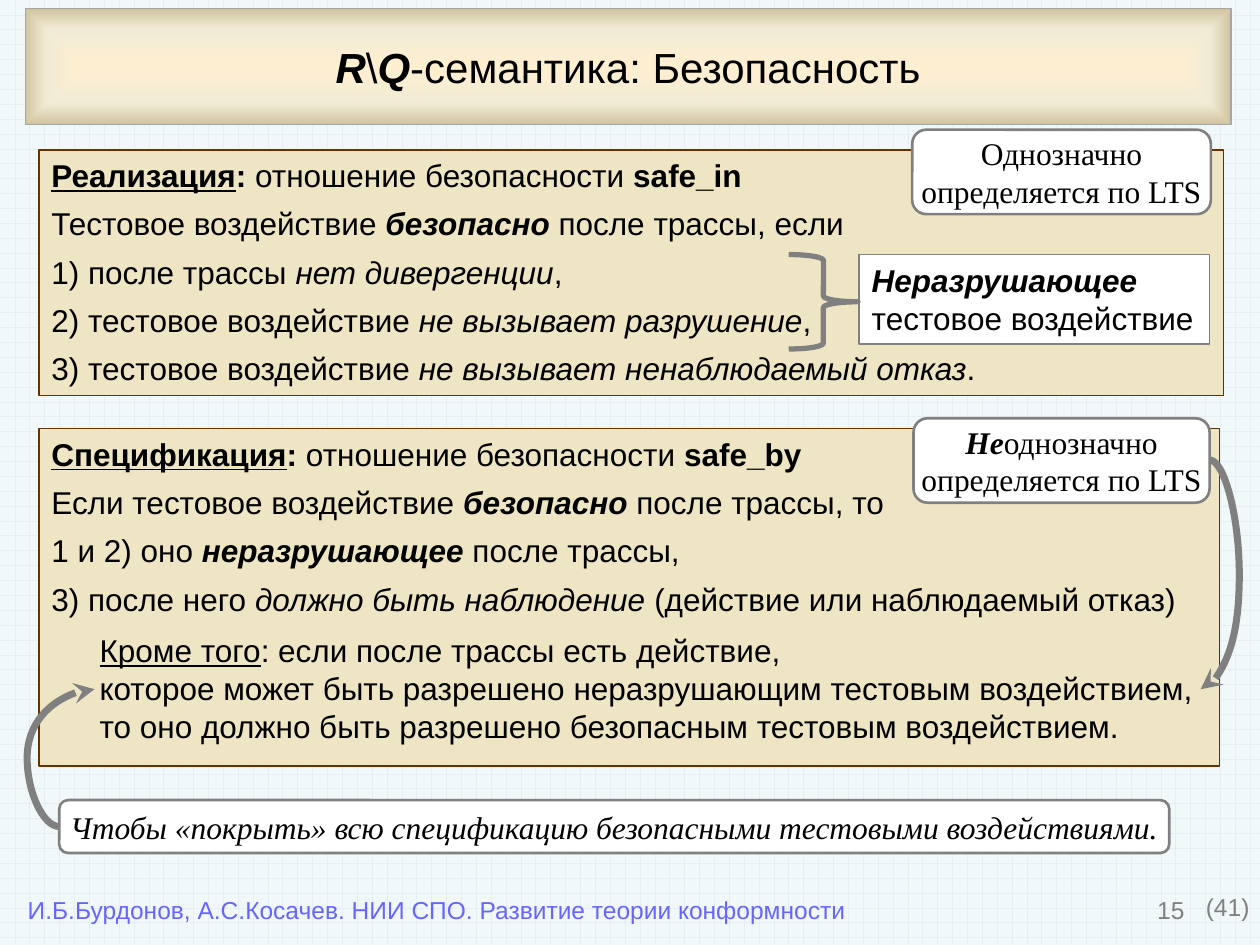
from lxml import etree
from pptx import Presentation
from pptx.dml.color import RGBColor
from pptx.enum.dml import MSO_PATTERN
from pptx.enum.shapes import MSO_CONNECTOR, MSO_SHAPE as SHAPE
from pptx.enum.text import MSO_ANCHOR as ANCHOR, MSO_AUTO_SIZE, PP_ALIGN as ALIGN
from pptx.oxml import parse_xml
from pptx.oxml.ns import nsdecls, qn
from pptx.util import Inches, Pt

BLACK = RGBColor(0x00, 0x00, 0x00)
WHITE = RGBColor(0xFF, 0xFF, 0xFF)
GRAY = RGBColor(0x80, 0x80, 0x80)
TITLE_LINE = RGBColor(0xA6, 0xA6, 0xA6)
SAND = RGBColor(0xEE, 0xE5, 0xC4)
BROWN = RGBColor(0x66, 0x33, 0x00)
VIOLET = RGBColor(0x66, 0x66, 0xFF)
BRICK = RGBColor(0xE7, 0xED, 0xF5)
PAPER = RGBColor(0xF1, 0xF8, 0xF9)
TITLE_STOPS = ((0, "FFEFD1"), (65, "F0EBD5"), (100, "D1C39F"))

SERIF = "Times New Roman"
INSETS = (0.1, 0.05, 0.1, 0.05)
STYLES = {"b": "bold", "i": "italic", "u": "underline"}

# A paragraph is a list of (text, style letters) runs.
IMPLEMENTATION = [
    [("Реализация", "bu"), (":", "b"), (" отношение безопасности ", ""), ("safe_in", "b")],
    [("Тестовое воздействие ", ""), ("безопасно", "bi"), (" после трассы, если", "")],
    [("1) после трассы ", ""), ("нет дивергенции", "i"), (",", "")],
    [("2) тестовое воздействие ", ""), ("не вызывает разрушение", "i"), (",", "")],
    [("3) тестовое воздействие ", ""), ("не вызывает ненаблюдаемый отказ", "i"), (".", "")],
]
SPECIFICATION = [
    [("Спецификация", "bu"), (": ", "b"), ("отношение безопасности ", ""), ("safe_by", "b")],
    [("Если тестовое воздействие ", ""), ("безопасно", "bi"), (" после трассы, то", "")],
    [("1 и 2) оно ", ""), ("неразрушающее", "bi"), (" после трассы,", "")],
    [("3) после него ", ""), ("должно быть наблюдение ", "i"),
     ("(действие или наблюдаемый отказ)", "")],
]
BESIDES = [[
    ("Кроме того", "u"),
    (": если после трассы есть действие,\n"
     "которое может быть разрешено неразрушающим тестовым воздействием,\n"
     "то оно должно быть разрешено безопасным тестовым воздействием.", ""),
]]
BY_LTS = [("определяется по LTS", "")]


def fill_text(sp, paragraphs, size=18, color=BLACK, font="Arial", align=ALIGN.LEFT,
              anchor=ANCHOR.TOP, insets=INSETS, wrap=True, gap=0):
    """Write styled paragraphs; gap is the space in points between them."""
    tf = sp.text_frame
    left, top, right, bottom = map(Inches, insets)
    frame = {"margin_left": left, "margin_top": top, "margin_right": right,
             "margin_bottom": bottom, "word_wrap": wrap, "vertical_anchor": anchor,
             "auto_size": MSO_AUTO_SIZE.NONE}
    for name, value in frame.items():
        setattr(tf, name, value)
    for i, runs in enumerate(paragraphs):
        p = tf.add_paragraph() if i else tf.paragraphs[0]
        p.alignment = align
        p.space_before = Pt(gap if i else 0)
        for text, style in runs:
            for j, line in enumerate(text.split("\n")):
                if j:
                    p.add_line_break()
                r = p.add_run()
                r.text = line
                r.font.name, r.font.size = font, Pt(size)
                r.font.color.rgb = color
                for letter in style:
                    setattr(r.font, STYLES[letter], True)


def add_text(slide, box, paragraphs, **fmt):
    fill_text(slide.shapes.add_textbox(*map(Inches, box)), paragraphs, **fmt)


def add_box(slide, kind, box, fill, line, width):
    sp = slide.shapes.add_shape(kind, *map(Inches, box))
    sp.shadow.inherit = False
    if fill is None:
        sp.fill.background()
    else:
        sp.fill.solid()
        sp.fill.fore_color.rgb = fill
    sp.line.color.rgb = line
    sp.line.width = Pt(width)
    return sp


def add_panel(slide, box, paragraphs):
    fill_text(add_box(slide, SHAPE.RECTANGLE, box, SAND, BROWN, 0.75), paragraphs, gap=6)


def add_callout(slide, box, paragraphs):
    sp = add_box(slide, SHAPE.FLOWCHART_ALTERNATE_PROCESS, box, WHITE, GRAY, 1.5)
    fill_text(sp, paragraphs, font=SERIF, align=ALIGN.CENTER, anchor=ANCHOR.MIDDLE,
              insets=(0, 0, 0, 0), wrap=False)


def add_curve(slide, start, end, bend):
    """Draw a curved arrow; bend is its middle as a fraction of its width."""
    c = slide.shapes.add_connector(MSO_CONNECTOR.CURVE, *map(Inches, start + end))
    c.line.color.rgb = GRAY
    c.line.width = Pt(4)
    etree.SubElement(c.line._get_or_add_ln(), qn("a:tailEnd"), type="stealth")
    props = c._element.spPr
    etree.SubElement(props, qn("a:effectLst"))
    guides = props.find(qn("a:prstGeom")).get_or_add_avLst()
    etree.SubElement(guides, qn("a:gd"), name="adj1", fmla=f"val {round(bend * 100000)}")


def add_title(slide, box, runs):
    title = slide.shapes.title
    title.left, title.top, title.width, title.height = map(Inches, box)
    stops = "".join(f'<a:gs pos="{pos * 1000}"><a:srgbClr val="{color}"/></a:gs>'
                    for pos, color in TITLE_STOPS)
    title._element.spPr.append(parse_xml(
        f'<a:gradFill {nsdecls("a")} rotWithShape="1"><a:gsLst>{stops}</a:gsLst>'
        '<a:path path="shape"><a:fillToRect l="50000" t="50000" r="50000" b="50000"/>'
        '</a:path></a:gradFill>'))
    title.line.color.rgb = TITLE_LINE
    title.line.width = Pt(0.75)
    fill_text(title, [runs], size=24, align=ALIGN.CENTER, anchor=ANCHOR.MIDDLE,
              insets=(0.1,) * 4)


def set_background(slide):
    fill = slide.background.fill
    fill.patterned()
    fill.pattern = MSO_PATTERN.HORIZONTAL_BRICK
    fill.fore_color.rgb = BRICK
    fill.back_color.rgb = PAPER


def add_footer(slide):
    plain = {"size": 14, "insets": (0, 0, 0, 0), "wrap": False}
    add_text(slide, (7.17, 7.05, 2.33, 0.52), [[("15", "")]], size=14, color=GRAY,
             align=ALIGN.RIGHT)
    add_text(slide, (9.57, 7.08, 0.35, 0.23), [[("(41)", "")]], color=GRAY, **plain)
    add_text(slide, (0.22, 7.1, 6.49, 0.24),
             [[("И.Б.Бурдонов, А.С.Косачев. НИИ СПО. Развитие теории конформности", "")]],
             color=VIOLET, **plain)


def main():
    prs = Presentation()
    prs.slide_width, prs.slide_height = Inches(10), Inches(7.5)
    slide = prs.slides.add_slide(prs.slide_layouts[5])
    set_background(slide)
    add_footer(slide)
    add_title(slide, (0.2, 0.07, 9.57, 0.92),
              [("R", "bi"), ("\\", ""), ("Q", "bi"), ("-семантика: Безопасность", "")])

    add_panel(slide, (0.31, 1.19, 9.4, 1.95), IMPLEMENTATION)
    add_panel(slide, (0.31, 3.4, 9.37, 2.68), SPECIFICATION)
    harmless = add_box(slide, SHAPE.RECTANGLE, (6.82, 2.02, 2.78, 0.71), WHITE, GRAY, 1)
    fill_text(harmless, [[("Неразрушающее", "bi")], [("тестовое воздействие", "")]],
              wrap=False)
    add_box(slide, SHAPE.RIGHT_BRACE, (6.26, 2.02, 0.55, 0.75), None, GRAY, 3)

    add_callout(slide, (0.47, 6.35, 8.81, 0.42),
                [[("Чтобы «покрыть» всю спецификацию безопасными тестовыми воздействиями.", "i")]])
    add_curve(slide, (0.47, 6.56), (0.75, 5.47), -0.91)
    add_text(slide, (0.75, 5.01, 8.78, 0.91), BESIDES, insets=(0.04, 0, 0, 0))
    add_callout(slide, (7.25, 3.32, 2.35, 0.67),
                [[("Не", "bi"), ("однозначно", "")], BY_LTS])
    add_callout(slide, (7.24, 1.03, 2.37, 0.67), [[("Однозначно", "")], BY_LTS])
    add_curve(slide, (9.6, 3.65), (9.53, 5.47), -3.38)
    prs.save("out.pptx")


if __name__ == "__main__":
    main()
